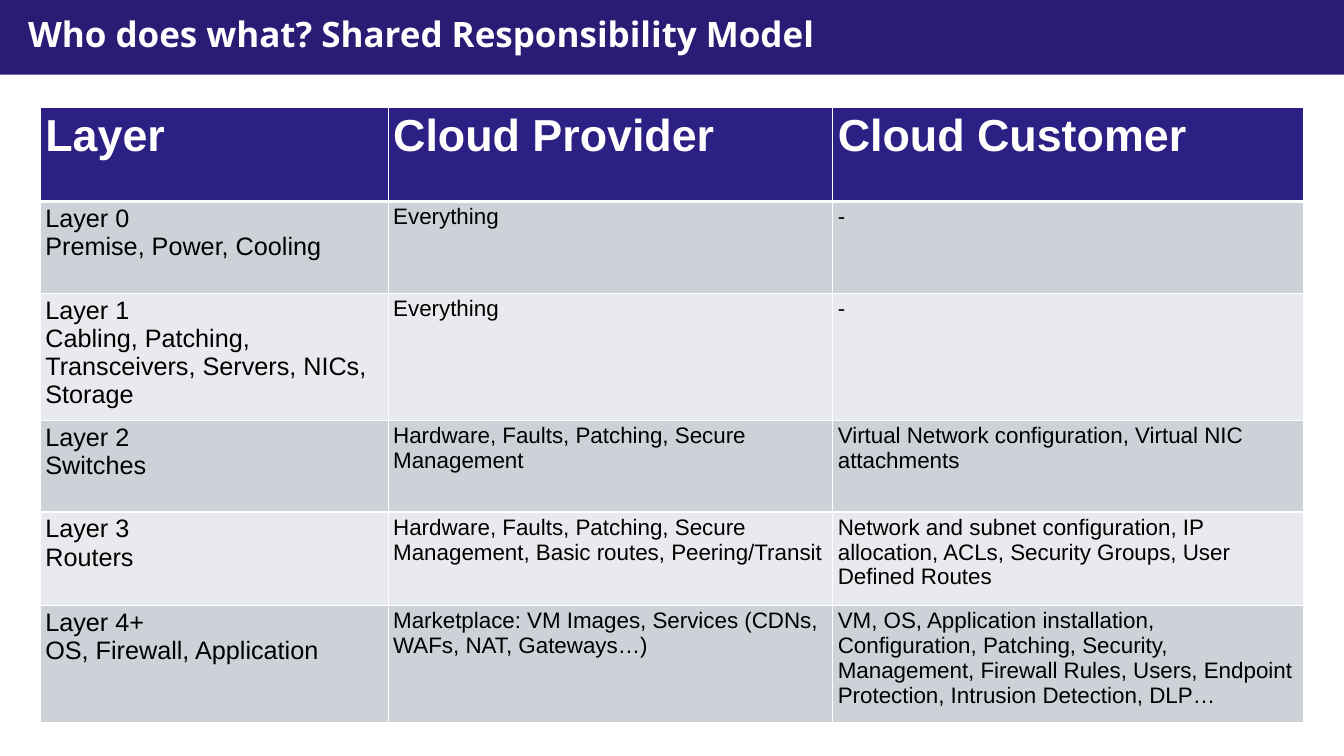
from dataclasses import dataclass

from lxml import etree
from pptx import Presentation
from pptx.dml.color import RGBColor
from pptx.enum.shapes import MSO_SHAPE
from pptx.enum.text import MSO_ANCHOR
from pptx.oxml.ns import qn
from pptx.util import Emu, Pt

RECTANGLE = MSO_SHAPE.RECTANGLE
MIDDLE = MSO_ANCHOR.MIDDLE
TOP = MSO_ANCHOR.TOP
PX = 9144
PAGE_WIDTH, PAGE_HEIGHT = 1333, 750


@dataclass(frozen=True)
class Theme:
    banner: str = "291C75"
    header: str = "2D2084"
    bands: tuple = ("CCD2D8", "E8EAED")
    light: str = "FFFFFF"
    dark: str = "000000"
    title_font: str = "Open Sans"
    body_font: str = "Arial"
    title_size: int = 25
    header_size: int = 32
    layer_size: int = 18
    duty_size: int = 16
    thin_border: int = 1
    thick_border: int = 3


THEME = Theme()
COLUMN_WIDTHS = (345, 441, 467)
ROW_HEIGHTS = (93, 91, 108, 91, 93, 116)
TITLE = "Who does what? Shared Responsibility Model"
RESPONSIBILITIES = (
    ("Layer", "Cloud Provider", "Cloud Customer"),
    ("Layer 0\nPremise, Power, Cooling", "Everything", "-"),
    ("Layer 1\nCabling, Patching, Transceivers, Servers, NICs, Storage", "Everything", "-"),
    (
        "Layer 2\nSwitches",
        "Hardware, Faults, Patching, Secure Management",
        "Virtual Network configuration, Virtual NIC attachments",
    ),
    (
        "Layer 3\nRouters",
        "Hardware, Faults, Patching, Secure Management, Basic routes, Peering/Transit",
        "Network and subnet configuration, IP allocation, ACLs, Security Groups, "
        "User Defined Routes",
    ),
    (
        "Layer 4+\nOS, Firewall, Application",
        "Marketplace: VM Images, Services (CDNs, WAFs, NAT, Gateways…)",
        "VM, OS, Application installation, Configuration, Patching, Security, Management, "
        "Firewall Rules, Users, Endpoint Protection, Intrusion Detection, DLP…",
    ),
)


def px(length):
    return Emu(length * PX)


def scale(box):
    return [px(length) for length in box]


def apply_format(target, values):
    for name, value in values.items():
        setattr(target, name, value)


def paint(fill, color):
    fill.solid()
    fill.fore_color.rgb = RGBColor.from_string(color)


def write_text(frame, text, color, font_format):
    frame.text = text
    for para in frame.paragraphs:
        for span in para.runs:
            apply_format(span.font, font_format)
            span.font.color.rgb = RGBColor.from_string(color)


def add_background(page, box):
    paint(page.background.fill, THEME.banner)
    panel = page.shapes.add_shape(RECTANGLE, *scale(box))
    panel.shadow.inherit = False
    paint(panel.fill, THEME.light)
    panel.line.fill.background()


def add_title(page, box):
    frame = page.shapes.add_textbox(*scale(box)).text_frame
    apply_format(frame, {
        "word_wrap": True,
        "vertical_anchor": MIDDLE,
        "margin_left": px(10),
        "margin_right": px(10),
        "margin_top": px(5),
        "margin_bottom": px(5),
    })
    write_text(frame, TITLE, THEME.light, {
        "name": THEME.title_font, "size": Pt(THEME.title_size), "bold": True,
    })
    frame.paragraphs[0].line_spacing = 0.9


def add_borders(cell, row_index):
    widths = dict.fromkeys(("lnL", "lnR", "lnT", "lnB"), THEME.thin_border)
    if row_index < 2:
        widths["lnT" if row_index else "lnB"] = THEME.thick_border
    properties = cell._tc.get_or_add_tcPr()
    for side, width in widths.items():
        line = etree.SubElement(properties, qn(f"a:{side}"), w=str(Pt(width)))
        fill = etree.SubElement(line, qn("a:solidFill"))
        etree.SubElement(fill, qn("a:srgbClr"), val=THEME.light)


def style_cell(cell, text, row_index, column_index):
    is_header = row_index == 0
    body_size = THEME.duty_size if column_index else THEME.layer_size
    add_borders(cell, row_index)
    paint(cell.fill, THEME.header if is_header else THEME.bands[(row_index - 1) % 2])
    apply_format(cell, {
        "vertical_anchor": TOP,
        "margin_left": px(5),
        "margin_right": px(5),
        "margin_top": px(3),
        "margin_bottom": px(3),
    })
    write_text(cell.text_frame, text, THEME.light if is_header else THEME.dark, {
        "name": THEME.body_font,
        "size": Pt(THEME.header_size if is_header else body_size),
        "bold": is_header,
    })


def add_responsibility_table(page, box):
    table = page.shapes.add_table(len(ROW_HEIGHTS), len(COLUMN_WIDTHS), *scale(box)).table
    apply_format(table, {"first_row": False, "horz_banding": False})
    for column, width in zip(table.columns, COLUMN_WIDTHS):
        column.width = px(width)
    for row, height in zip(table.rows, ROW_HEIGHTS):
        row.height = px(height)
    for row_index, texts in enumerate(RESPONSIBILITIES):
        for column_index, text in enumerate(texts):
            style_cell(table.cell(row_index, column_index), text, row_index, column_index)


def main():
    deck = Presentation()
    apply_format(deck, {"slide_width": px(PAGE_WIDTH), "slide_height": px(PAGE_HEIGHT)})
    page = deck.slides.add_slide(deck.slide_layouts[6])
    add_background(page, (0, 74, PAGE_WIDTH, PAGE_HEIGHT - 74))
    add_title(page, (18, 9, 893, 54))
    add_responsibility_table(page, (40, 107, sum(COLUMN_WIDTHS), sum(ROW_HEIGHTS)))
    deck.save("out.pptx")


if __name__ == "__main__":
    main()
